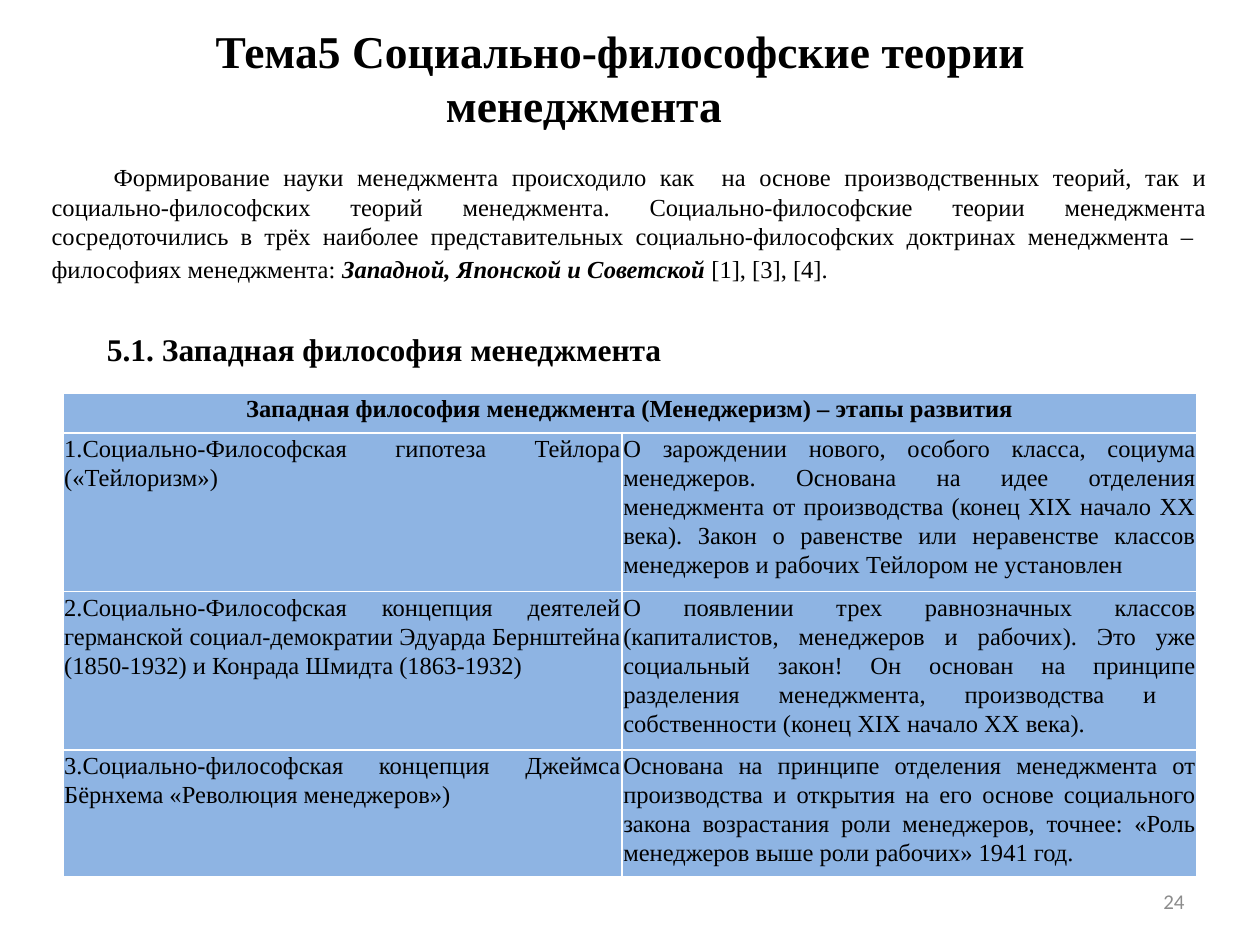
from lxml.etree import SubElement
from pptx import Presentation
from pptx.dml.color import RGBColor
from pptx.enum.text import MSO_ANCHOR, MSO_AUTO_SIZE, PP_ALIGN
from pptx.oxml.ns import qn
from pptx.util import Pt

COLORS = {"text": "000000", "cell": "8EB4E3", "border": "FFFFFF", "number": "8C8C8C"}
SERIF = "Times New Roman"
FIRST_LINE = 35.4

INTRO = [
    ("Формирование науки менеджмента происходило как  на основе производственных "
     "теорий, так и социально-философских теорий менеджмента. Социально-философские "
     "теории менеджмента сосредоточились в трёх наиболее представительных "
     "социально-философских доктринах менеджмента –  философиях менеджмента: ", 14, False),
    ("Западной, Японской и Советской ", 14, True),
    ("[1], [3], [4].", 14, False),
    (" ", 16, False),
]

TABLE_HEADING = "Западная философия менеджмента (Менеджеризм) – этапы развития"
STAGES = [
    ("1.Социально-Философская гипотеза Тейлора («Тейлоризм») ",
     "О зарождении нового, особого класса, социума менеджеров. Основана на идее "
     "отделения менеджмента от производства (конец XIX начало XX века). Закон о "
     "равенстве или неравенстве классов менеджеров и рабочих Тейлором не установлен"),
    ("2.Социально-Философская концепция деятелей германской социал-демократии "
     "Эдуарда Бернштейна (1850-1932) и Конрада Шмидта (1863-1932) ",
     "О появлении трех равнозначных классов (капиталистов, менеджеров и рабочих). "
     "Это уже социальный закон! Он основан на принципе разделения менеджмента, "
     "производства и  собственности (конец XIX начало XX века).  "),
    ("3.Социально-философская концепция Джеймса Бёрнхема «Революция менеджеров») ",
     "Основана на принципе отделения менеджмента от производства и открытия на его "
     "основе социального закона возрастания роли менеджеров, точнее: «Роль "
     "менеджеров выше роли рабочих» 1941 год."),
]
COLUMN_WIDTHS = (319.5, 328.5)
ROW_HEIGHTS = (22.8, 90.4, 90.7, 72)


def add_run(paragraph, text, size, bold=False, italic=False, font=SERIF, color="text"):
    run = paragraph.add_run()
    run.text = text
    run.font.name, run.font.size = font, Pt(size)
    run.font.bold, run.font.italic = bold, italic
    run.font.color.rgb = RGBColor.from_string(COLORS[color])


def indent_first_line(paragraph):
    """Indent the first line and drop the bullet of the template."""
    properties = paragraph._p.get_or_add_pPr()
    properties.set("marL", "0")
    properties.set("indent", str(Pt(FIRST_LINE)))
    SubElement(properties, qn("a:buNone"))


def place(shape, left, top, width, height):
    shape.left, shape.top = Pt(left), Pt(top)
    shape.width, shape.height = Pt(width), Pt(height)


def format_placeholder(placeholder, box, anchor, align):
    place(placeholder, *box)
    frame = placeholder.text_frame
    frame.auto_size = MSO_AUTO_SIZE.SHAPE_TO_FIT_TEXT
    frame.vertical_anchor = anchor
    paragraph = frame.paragraphs[0]
    paragraph.alignment = align
    paragraph.space_before = Pt(0)
    indent_first_line(paragraph)
    return paragraph


def add_label(slide, box, align=PP_ALIGN.LEFT, anchor=MSO_ANCHOR.TOP, wrap=True):
    label = slide.shapes.add_textbox(*map(Pt, box))
    label.text_frame.word_wrap = wrap
    label.text_frame.vertical_anchor = anchor
    paragraph = label.text_frame.paragraphs[0]
    paragraph.alignment = align
    return paragraph


def add_borders(cell):
    properties = cell._tc.get_or_add_tcPr()
    for side in ("lnL", "lnR", "lnT", "lnB"):
        line = SubElement(properties, qn(f"a:{side}"), w=str(Pt(1)))
        fill = SubElement(line, qn("a:solidFill"))
        SubElement(fill, qn("a:srgbClr"), val=COLORS["border"])


def fill_cell(cell, text, align=PP_ALIGN.JUSTIFY, bold=False, side_margin=0.7):
    add_borders(cell)
    cell.fill.solid()
    cell.fill.fore_color.rgb = RGBColor.from_string(COLORS["cell"])
    cell.margin_left = cell.margin_right = Pt(side_margin)
    cell.margin_top, cell.margin_bottom = Pt(0.7), Pt(0)
    paragraph = cell.text_frame.paragraphs[0]
    paragraph.alignment = align
    paragraph.line_spacing = 1.07
    paragraph.space_after = Pt(8)
    add_run(paragraph, text, 14, bold)


def add_stages_table(slide, left, top):
    size = (sum(COLUMN_WIDTHS), sum(ROW_HEIGHTS))
    table = slide.shapes.add_table(
        len(ROW_HEIGHTS), len(COLUMN_WIDTHS), *map(Pt, (left, top, *size))).table
    table.first_row = table.horz_banding = False
    for column, width in zip(table.columns, COLUMN_WIDTHS):
        column.width = Pt(width)
    for row, height in zip(table.rows, ROW_HEIGHTS):
        row.height = Pt(height)

    # Heading across both columns, then one row per stage
    heading = table.cell(0, 0)
    heading.merge(table.cell(0, 1))
    fill_cell(heading, TABLE_HEADING, PP_ALIGN.CENTER, bold=True, side_margin=5)
    for row, stage in enumerate(STAGES, start=1):
        for column, text in enumerate(stage):
            fill_cell(table.cell(row, column), text)


def main():
    deck = Presentation()
    deck.slide_width, deck.slide_height = Pt(720), Pt(540)
    slide = deck.slides.add_slide(deck.slide_layouts[1])

    # Topic title
    title = format_placeholder(slide.shapes.title, (70.6, 9.4, 532.8, 70.6),
                               MSO_ANCHOR.TOP, PP_ALIGN.CENTER)
    add_run(title, "Тема5 Социально-философские теории менеджмента ", 26, bold=True)

    # Introduction
    intro = format_placeholder(slide.placeholders[1], (22.3, 88.6, 674.6, 77.8),
                               MSO_ANCHOR.MIDDLE, PP_ALIGN.JUSTIFY)
    for text, size, emphasis in INTRO:
        add_run(intro, text, size, bold=emphasis, italic=emphasis)

    # Section heading and its table
    section = add_label(slide, (54, 185, 339, 28.8), wrap=False)
    add_run(section, "5.1. Западная философия менеджмента ", 18, bold=True)
    add_stages_table(slide, 36, 224.6)

    # Page number
    number = add_label(slide, (516.2, 500.4, 167.8, 28.8), PP_ALIGN.RIGHT, MSO_ANCHOR.MIDDLE)
    add_run(number, "24", 12, font="Calibri", color="number")

    deck.save("out.pptx")


if __name__ == "__main__":
    main()
